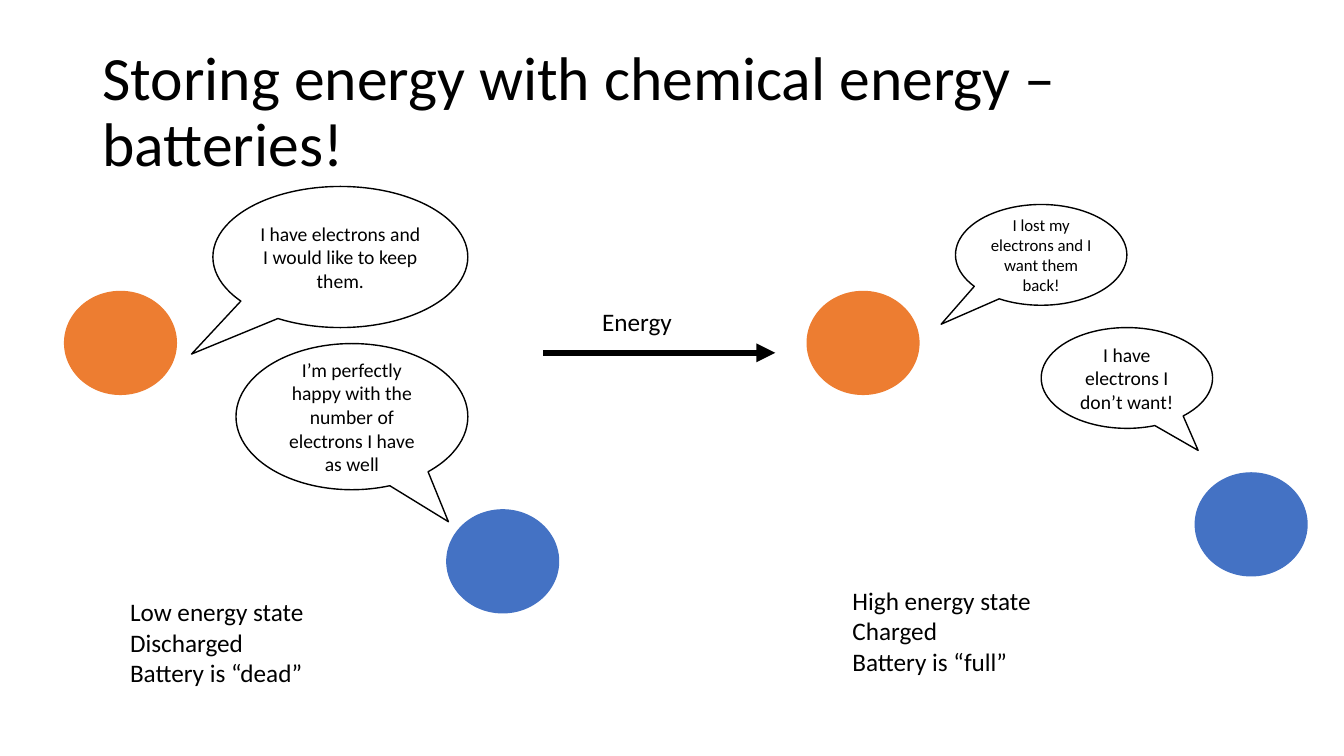
from dataclasses import dataclass

from lxml import etree
from pptx import Presentation
from pptx.dml.color import RGBColor
from pptx.enum.shapes import MSO_CONNECTOR, MSO_SHAPE
from pptx.enum.text import MSO_ANCHOR, MSO_AUTO_SIZE, PP_ALIGN
from pptx.oxml.ns import qn
from pptx.util import Inches, Pt

CIRCLE = MSO_SHAPE.OVAL
SPEECH = MSO_SHAPE.OVAL_CALLOUT
STRAIGHT = MSO_CONNECTOR.STRAIGHT
MIDDLE, TOP = MSO_ANCHOR.MIDDLE, MSO_ANCHOR.TOP
LEFT, CENTER = PP_ALIGN.LEFT, PP_ALIGN.CENTER
NO_FIT, GROW = MSO_AUTO_SIZE.NONE, MSO_AUTO_SIZE.SHAPE_TO_FIT_TEXT

SLIDE_W, SLIDE_H = Inches(13.33), Inches(7.5)
COL, ROW = SLIDE_W / 160, SLIDE_H / 90
TITLE_ONLY = 5


@dataclass(frozen=True)
class Theme:
    font: str = "Calibri"
    ink: RGBColor = RGBColor(0, 0, 0)
    paper: RGBColor = RGBColor(255, 255, 255)
    donor: RGBColor = RGBColor(0xED, 0x7D, 0x31)
    acceptor: RGBColor = RGBColor(0x44, 0x72, 0xC4)
    title: int = 44
    label: int = 18
    speech: int = 14
    small_speech: int = 12
    outline: float = 1
    arrow: float = 4.5


THEME = Theme()


@dataclass(frozen=True)
class Box:
    col: float
    row: float
    cols: float
    rows: float

    def inner(self, col, row, cols, rows):
        return Box(self.col + col, self.row + row, cols, rows)

    def emu(self):
        return (round(self.col * COL), round(self.row * ROW),
                round(self.cols * COL), round(self.rows * ROW))


@dataclass(frozen=True)
class Bubble:
    place: tuple
    words: str
    size: int = THEME.speech


@dataclass(frozen=True)
class State:
    box: Box
    acceptor_at: tuple
    donor_speech: Bubble
    acceptor_speech: Bubble
    caption_at: tuple
    caption: tuple


LOW_ENERGY = State(
    Box(7.7, 22.2, 59.5, 60.4),
    (45.5, 38.5),
    Bubble((17.65, 0, 30.35, 16.8), "I have electrons and I would like to keep them."),
    Bubble((20.4, 18.7, 27.6, 17.4),
           "I’m perfectly happy with the number of electrons I have as well"),
    (6.6, 48.25),
    ("Low energy state", "Discharged", "Battery is “dead”"),
)
HIGH_ENERGY = State(
    Box(96.1, 22.2, 59.5, 60.4),
    (46.2, 34.1),
    Bubble((17.65, 2.15, 20.4, 12), "I lost my electrons and I want them back!",
           THEME.small_speech),
    Bubble((27.85, 16.8, 20.4, 12), "I have electrons I don’t want!"),
    (4.2, 46.9),
    ("High energy state", "Charged", "Battery is “full”"),
)
DONOR_AT = (0, 12.5)
ATOM_SIZE = (13.3, 12.25)
CAPTION_SIZE = (38.15, 12.1)
DONOR_TAIL = (-0.584, 0.688)
ACCEPTOR_TAIL = (0.416, 0.719)


def write(frame, lines, size, align=LEFT, anchor=TOP, wrap=True, fit=NO_FIT):
    frame.text = "\n".join(lines)
    frame.word_wrap = wrap
    frame.auto_size = fit
    frame.vertical_anchor = anchor
    for paragraph in frame.paragraphs:
        paragraph.alignment = align
        paragraph.font.name = THEME.font
        paragraph.font.size = Pt(size)
        paragraph.font.color.rgb = THEME.ink


def add_outlined(slide, kind, box, fill, line):
    shape = slide.shapes.add_shape(kind, *box.emu())
    shape.shadow.inherit = False
    shape.fill.solid()
    shape.fill.fore_color.rgb = fill
    shape.line.color.rgb = line
    shape.line.width = Pt(THEME.outline)
    return shape


def add_bubble(slide, box, bubble, tail):
    callout = add_outlined(slide, SPEECH, box.inner(*bubble.place), THEME.paper, THEME.ink)
    for index, share in enumerate(tail):
        callout.adjustments[index] = share
    write(callout.text_frame, [bubble.words], bubble.size, CENTER, MIDDLE)


def add_label(slide, box, lines, wrap=True):
    label = slide.shapes.add_textbox(*box.emu())
    write(label.text_frame, lines, THEME.label, wrap=wrap, fit=GROW)


def add_title(slide, box, words):
    title = slide.shapes.title
    title.left, title.top, title.width, title.height = box.emu()
    write(title.text_frame, [words], THEME.title, anchor=MIDDLE)
    title.text_frame.paragraphs[0].line_spacing = 0.9


def add_state(slide, state):
    box = state.box
    for place, color in ((DONOR_AT, THEME.donor), (state.acceptor_at, THEME.acceptor)):
        add_outlined(slide, CIRCLE, box.inner(*place, *ATOM_SIZE), color, color)
    add_bubble(slide, box, state.donor_speech, DONOR_TAIL)
    add_bubble(slide, box, state.acceptor_speech, ACCEPTOR_TAIL)
    add_label(slide, box.inner(*state.caption_at, *CAPTION_SIZE), state.caption)


def add_energy_arrow(slide, box, words):
    left, top, width, height = box.emu()
    arrow = slide.shapes.add_connector(STRAIGHT, left, top + height, left + width, top + height)
    arrow.line.color.rgb = THEME.ink
    arrow.line.width = Pt(THEME.arrow)
    etree.SubElement(arrow.line._get_or_add_ln(), qn("a:tailEnd"), type="triangle")
    etree.SubElement(arrow._element.spPr, qn("a:effectLst"))
    add_label(slide, box.inner(5.8, 0, 10.8, 4.8), [words], wrap=False)


def main():
    deck = Presentation()
    deck.slide_width, deck.slide_height = SLIDE_W, SLIDE_H
    slide = deck.slides.add_slide(deck.slide_layouts[TITLE_ONLY])
    add_title(slide, Box(11, 4.8, 138, 17.4), "Storing energy with chemical energy – batteries!")
    for state in (LOW_ENERGY, HIGH_ENERGY):
        add_state(slide, state)
    add_energy_arrow(slide, Box(64.7, 35.9, 27.6, 6.1), "Energy")
    deck.save("out.pptx")


if __name__ == "__main__":
    main()
